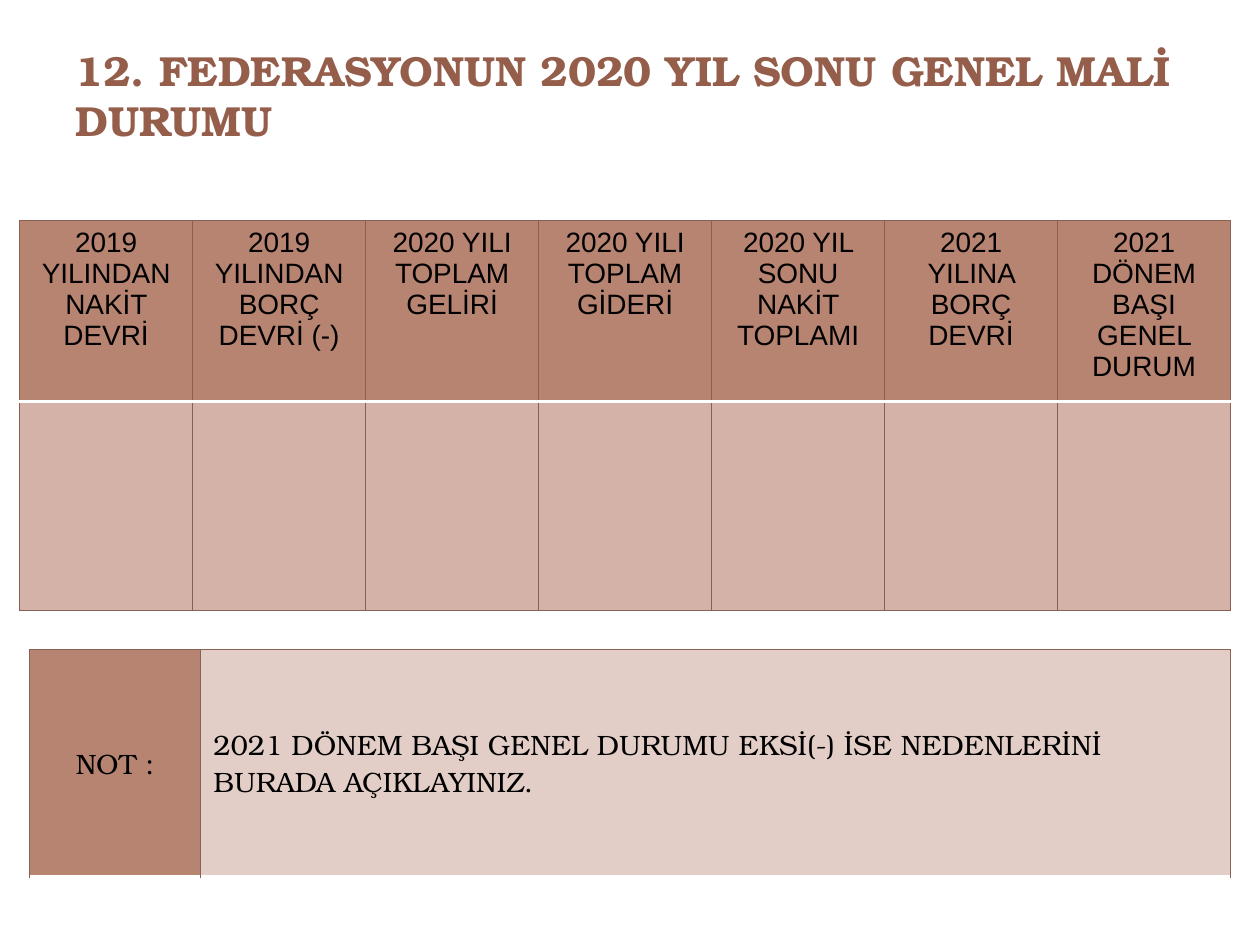
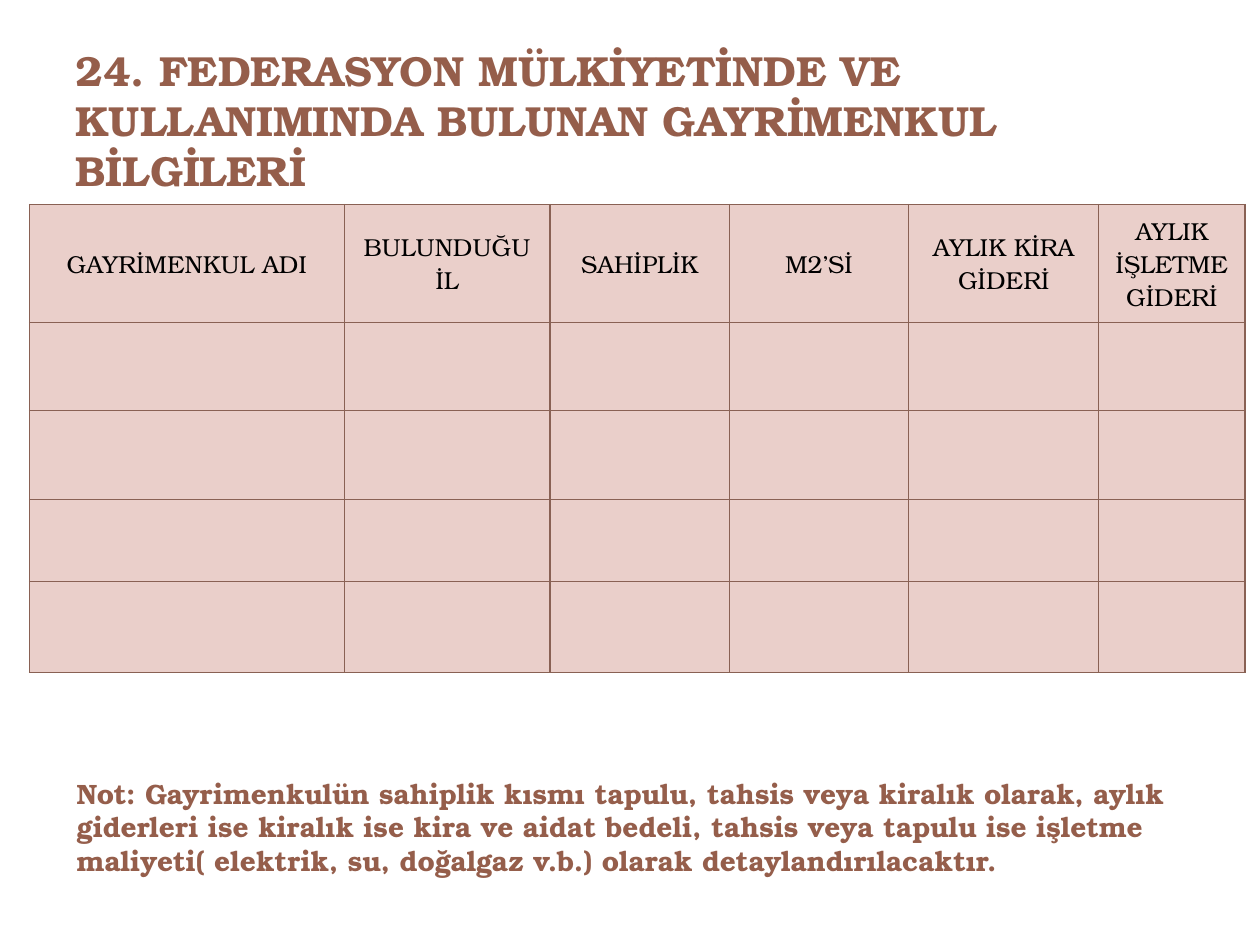
import pptx
import pptx.dml.color
import pptx.enum.text
import pptx.oxml.ns
import pptx.util
from lxml import etree

Pt = pptx.util.Pt
RGBColor = pptx.dml.color.RGBColor
ALIGN = pptx.enum.text.PP_ALIGN
ANCHOR = pptx.enum.text.MSO_ANCHOR

TITLE_BROWN = RGBColor(0x95, 0x5E, 0x4B)
BORDER_BROWN = RGBColor(0x89, 0x61, 0x54)
HEADER_FILL = RGBColor(0xB8, 0x84, 0x72)
BODY_FILL = RGBColor(0xD4, 0xB2, 0xA8)
NOTE_FILL = RGBColor(0xE3, 0xCE, 0xC7)
PROPERTY_FILL = RGBColor(0xEA, 0xCF, 0xCA)
BLACK = RGBColor(0, 0, 0)
WHITE = RGBColor(0xFF, 0xFF, 0xFF)

SERIF = "TeX Gyre Bonum"
SANS = "Arial"

TITLE_BOX = (36, 21.6, 648, 90)
BROWN_LINE = (BORDER_BROWN, 0.75)
WHITE_LINE = (WHITE, 2)


def write_text(frame, text, size=16, font=SERIF, color=BLACK, bold=False, align=ALIGN.LEFT):
    paragraph = frame.paragraphs[0]
    paragraph.alignment = align
    run = paragraph.add_run()
    run.text = text
    run.font.size = Pt(size)
    run.font.name = font
    run.font.bold = bold
    run.font.color.rgb = color


def add_brown_text(slide, box, text, size):
    """Bold brown text, used for titles and for notes below a table."""
    frame = slide.shapes.add_textbox(*map(Pt, box)).text_frame
    frame.word_wrap = True
    write_text(frame, text, size=size, color=TITLE_BROWN, bold=True)


def set_borders(cell, **lines):
    """Draw each side in brown unless left, right, top or bottom gives another line."""
    properties = cell._tc.get_or_add_tcPr()
    for position, side in enumerate(("left", "right", "top", "bottom")):
        color, width = lines.get(side, BROWN_LINE)
        line = etree.Element(pptx.oxml.ns.qn(f"a:ln{side[0].upper()}"), w=str(Pt(width)))
        fill = etree.SubElement(line, pptx.oxml.ns.qn("a:solidFill"))
        etree.SubElement(fill, pptx.oxml.ns.qn("a:srgbClr"), val=str(color))
        properties.insert(position, line)


def style_cell(cell, fill, anchor=ANCHOR.MIDDLE, **lines):
    cell.fill.solid()
    cell.fill.fore_color.rgb = fill
    cell.vertical_anchor = anchor
    set_borders(cell, **lines)


def add_plain_table(slide, left, top, widths, heights):
    frame = slide.shapes.add_table(
        len(heights), len(widths), Pt(left), Pt(top), Pt(sum(widths)), Pt(sum(heights)))
    table = frame.table
    table.first_row = table.horz_banding = False
    for column, width in zip(table.columns, widths):
        column.width = Pt(width)
    for row, height in zip(table.rows, heights):
        row.height = Pt(height)
    return table


def add_balance_table(slide, left, top, width):
    headings = (
        "2019 YILINDAN NAKİT DEVRİ",
        "2019 YILINDAN BORÇ DEVRİ (-)",
        "2020 YILI TOPLAM GELİRİ",
        "2020 YILI TOPLAM GİDERİ",
        "2020 YIL SONU NAKİT TOPLAMI",
        "2021 YILINA BORÇ DEVRİ",
        "2021 DÖNEM BAŞI GENEL DURUM",
    )
    widths = [width / len(headings)] * len(headings)
    table = add_plain_table(slide, left, top, widths, (99.5, 119.5))
    for column, heading in enumerate(headings):
        header, body = table.cell(0, column), table.cell(1, column)
        write_text(header.text_frame, heading, font=SANS, align=ALIGN.CENTER)
        style_cell(header, HEADER_FILL, anchor=ANCHOR.TOP, bottom=WHITE_LINE)
        style_cell(body, BODY_FILL, top=WHITE_LINE)


def add_note_table(slide, left, top, width, height):
    label_width = 98
    table = add_plain_table(slide, left, top, (label_width, width - label_width), (height,))
    label, note = table.cell(0, 0), table.cell(0, 1)
    write_text(label.text_frame, "NOT :", align=ALIGN.CENTER)
    write_text(note.text_frame,
               "2021 DÖNEM BAŞI GENEL DURUMU EKSİ(-) İSE NEDENLERİNİ BURADA AÇIKLAYINIZ.")
    style_cell(label, HEADER_FILL, bottom=WHITE_LINE)
    style_cell(note, NOTE_FILL, bottom=WHITE_LINE)


def add_property_table(slide, left, top):
    columns = {
        "GAYRİMENKUL ADI": 180,
        "BULUNDUĞU İL": 117.5,
        "SAHİPLİK": 102.5,
        "M2’Sİ": 102.5,
        "AYLIK KİRA GİDERİ": 108.75,
        "AYLIK İŞLETME GİDERİ": 83.5,
    }
    table = add_plain_table(slide, left, top, columns.values(), (67.5, 50.5, 50.5, 47, 52))
    for cell in table.iter_cells():
        style_cell(cell, PROPERTY_FILL)
    for column, heading in enumerate(columns):
        write_text(table.cell(0, column).text_frame, heading, size=14, align=ALIGN.CENTER)


def add_titled_slide(presentation, title):
    slide = presentation.slides.add_slide(presentation.slide_layouts[6])
    add_brown_text(slide, TITLE_BOX, title, size=24)
    return slide


def build_balance_slide(presentation):
    slide = add_titled_slide(presentation, "12. FEDERASYONUN 2020 YIL SONU GENEL MALİ DURUMU")
    add_balance_table(slide, left=11.25, top=126, width=692)
    add_note_table(slide, left=16.75, top=371.25, width=686.25, height=129.5)


def build_property_slide(presentation):
    slide = add_titled_slide(
        presentation,
        "24. FEDERASYON MÜLKİYETİNDE VE KULLANIMINDA BULUNAN GAYRİMENKUL BİLGİLERİ")
    add_property_table(slide, left=16.75, top=116.75)
    add_brown_text(
        slide, (36.75, 440, 648, 55.5),
        "Not: Gayrimenkulün sahiplik kısmı tapulu, tahsis veya kiralık olarak, aylık "
        "giderleri ise kiralık ise kira ve aidat bedeli, tahsis veya tapulu ise işletme "
        "maliyeti( elektrik, su, doğalgaz v.b.) olarak detaylandırılacaktır.",
        size=16)


def main():
    presentation = pptx.Presentation()
    presentation.slide_width = Pt(720)
    presentation.slide_height = Pt(540)
    build_balance_slide(presentation)
    build_property_slide(presentation)
    presentation.save("out.pptx")


if __name__ == "__main__":
    main()
